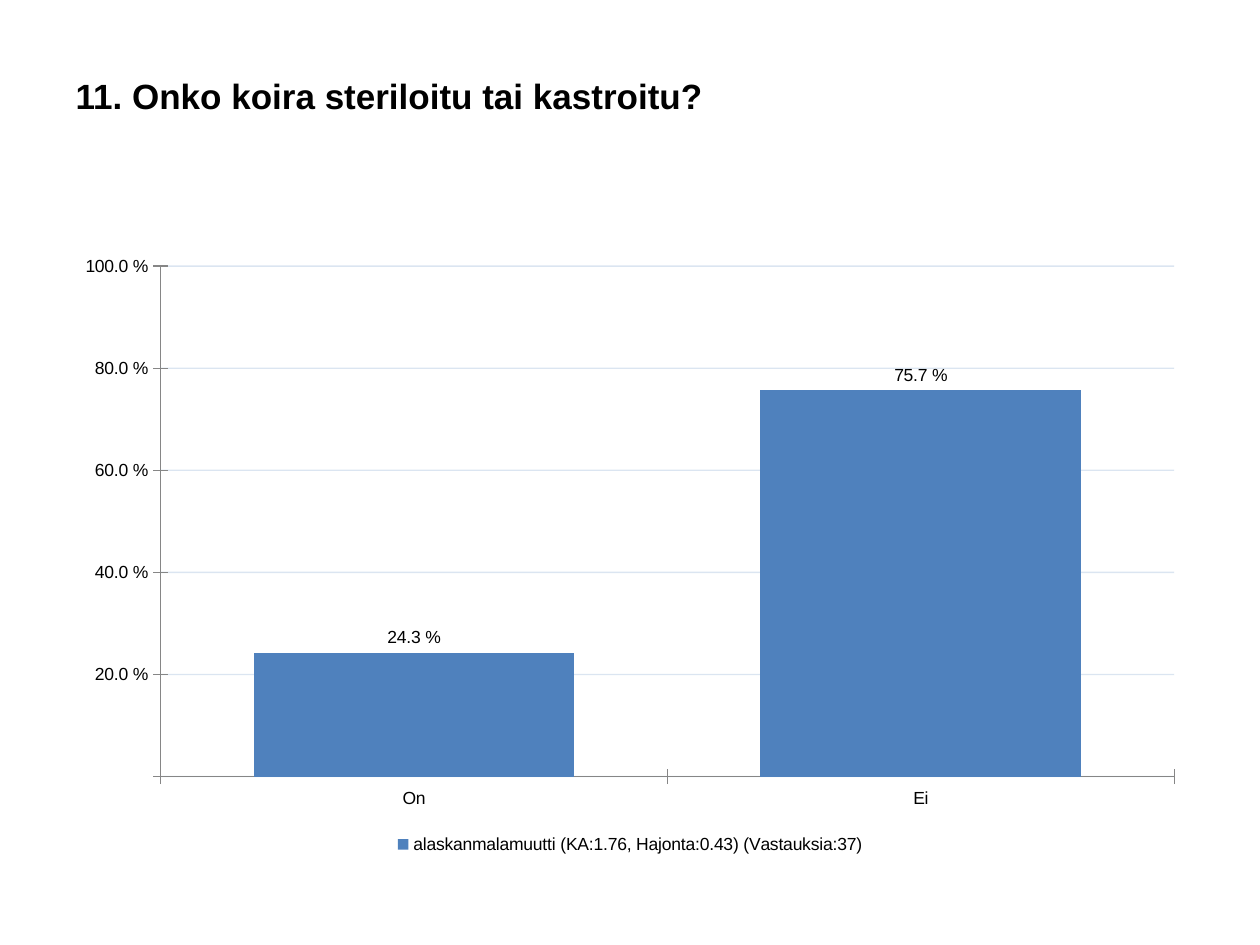
"""Build a slide with a survey question and a column chart of its answers."""
import pptx
import pptx.chart.data
import pptx.dml.color
import pptx.enum.chart
import pptx.enum.text
import pptx.oxml
import pptx.oxml.ns
import pptx.util

Pt = pptx.util.Pt
RGBColor = pptx.dml.color.RGBColor
BLACK = RGBColor(0x00, 0x00, 0x00)
BLUE = RGBColor(0x4F, 0x81, 0xBD)
GREY = RGBColor(0x86, 0x86, 0x86)
PERCENT = "0.0\\ %;;;"
LAYOUT = (
    "<c:layout %s><c:manualLayout>"
    '<c:layoutTarget val="inner"/><c:xMode val="edge"/><c:yMode val="edge"/>'
    '<c:x val="0.086"/><c:y val="0.036"/><c:w val="0.894"/><c:h val="0.83"/>'
    "</c:manualLayout></c:layout>" % pptx.oxml.ns.nsdecls("c")
)


def style_font(font, size=10, bold=False, color=BLACK, name="Arial"):
    font.name, font.size, font.bold = name, Pt(size), bold
    font.color.rgb = color


def write(tf, text, align=pptx.enum.text.PP_ALIGN.LEFT, **font):
    p = tf.paragraphs[0]
    p.alignment = align
    r = p.add_run()
    r.text = text
    style_font(r.font, **font)


class Deck:
    def __init__(self, width, height):
        self.prs = pptx.Presentation()
        self.prs.slide_width, self.prs.slide_height = Pt(width), Pt(height)
        self.s = None

    def add_slide(self):
        self.s = self.prs.slides.add_slide(self.prs.slide_layouts[5])

    def title(self, text, x, y, w, h, **font):
        sp = self.s.shapes.title
        sp.left, sp.top, sp.width, sp.height = Pt(x), Pt(y), Pt(w), Pt(h)
        tf = sp.text_frame
        tf.word_wrap = True
        tf.vertical_anchor = pptx.enum.text.MSO_ANCHOR.MIDDLE
        write(tf, text, **font)

    def axis(self, axis):
        axis.major_tick_mark = pptx.enum.chart.XL_TICK_MARK.CROSS
        axis.minor_tick_mark = pptx.enum.chart.XL_TICK_MARK.NONE
        axis.format.line.color.rgb = GREY
        axis.format.line.width = Pt(0.75)
        axis.tick_labels.number_format = PERCENT
        axis.tick_labels.number_format_is_linked = False
        style_font(axis.tick_labels.font)

    def gridlines(self, axis):
        axis.has_major_gridlines = True
        line = axis.major_gridlines.format.line
        line.color.rgb = BLUE
        line.width = Pt(0.75)
        color = axis.major_gridlines._xAx.find(".//" + pptx.oxml.ns.qn("c:majorGridlines"))
        color = color.find(".//" + pptx.oxml.ns.qn("a:srgbClr"))
        color.append(pptx.oxml.parse_xml(
            '<a:alpha %s val="20000"/>' % pptx.oxml.ns.nsdecls("a")))

    def column_chart(self, categories, name, values, x, y, w, h):
        data = pptx.chart.data.CategoryChartData(number_format=PERCENT)
        data.categories = categories
        data.add_series(name, values)
        chart = self.s.shapes.add_chart(
            pptx.enum.chart.XL_CHART_TYPE.COLUMN_CLUSTERED,
            Pt(x), Pt(y), Pt(w), Pt(h), data).chart
        style_font(chart.font, name="Calibri")
        chart.has_title = False
        chart.has_legend = True
        chart.legend.position = pptx.enum.chart.XL_LEGEND_POSITION.BOTTOM
        chart.legend.include_in_layout = False
        style_font(chart.legend.font)

        self.axis(chart.category_axis)
        self.axis(chart.value_axis)
        self.gridlines(chart.value_axis)
        chart.value_axis.minimum_scale = 0
        chart.value_axis.maximum_scale = 1
        chart.value_axis.major_unit = 0.2

        plot = chart.plots[0]
        plot.gap_width = 58
        plot.vary_by_categories = False
        series = plot.series[0]
        series.format.fill.solid()
        series.format.fill.fore_color.rgb = BLUE
        labels = series.data_labels
        labels.show_value = True
        labels.number_format = PERCENT
        labels.number_format_is_linked = False
        labels.position = pptx.enum.chart.XL_LABEL_POSITION.OUTSIDE_END
        style_font(labels.font)

        area = chart._chartSpace.chart.plotArea
        for old in area.findall(pptx.oxml.ns.qn("c:layout")):
            area.remove(old)
        area.insert(0, pptx.oxml.parse_xml(LAYOUT))


def main():
    deck = Deck(720, 540)
    deck.add_slide()
    deck.title("11. Onko koira steriloitu tai kastroitu?",
               36, 26, 648, 57, size=20, bold=True)
    deck.column_chart(
        ["On", "Ei"],
        "alaskanmalamuutti (KA:1.76, Hajonta:0.43) (Vastauksia:37)",
        [0.243, 0.757], 36, 139.5, 648, 351.5)
    deck.prs.save("out.pptx")


if __name__ == "__main__":
    main()
